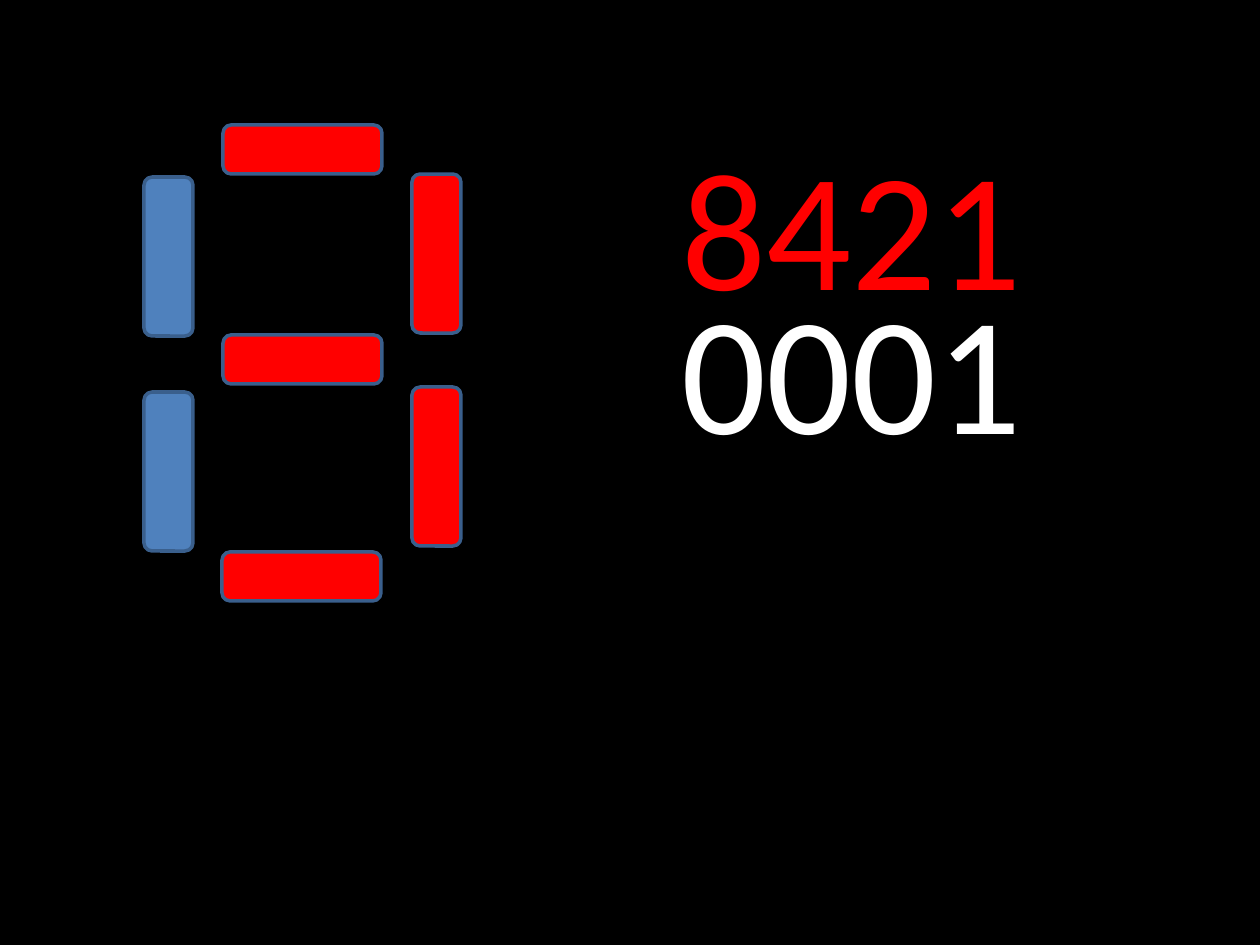
import pptx
import pptx.util
import pptx.dml.color
import pptx.enum.shapes

SCALE = 914400 // 126
LIT, UNLIT, OUTLINE = "FF0000", "4F81BD", "3A5F8C"
BAR_LENGTH, BAR_THICKNESS = 159, 49

SEGMENTS = [
    (223, 125, 0, LIT),
    (223, 335, 0, LIT),
    (222, 552, 0, LIT),
    (357, 442, 270, LIT),
    (89, 447, 270, UNLIT),
    (357, 229, 270, LIT),
    (89, 232, 270, UNLIT),
]
NUMBERS = [
    ("8421", 116, 420, "FF0000"),
    ("0001", 260, 217, "FFFFFF"),
]
NUMBER_LEFT, NUMBER_WIDTH = 669, 486


def px(*lengths):
    return [pptx.util.Emu(length * SCALE) for length in lengths]


def paint(fill, color):
    fill.solid()
    fill.fore_color.rgb = pptx.dml.color.RGBColor.from_string(color)


def add_segment(page, left, top, rotation, color):
    bar = page.shapes.add_shape(
        pptx.enum.shapes.MSO_SHAPE.ROUNDED_RECTANGLE,
        *px(left, top, BAR_LENGTH, BAR_THICKNESS))
    bar.rotation = rotation
    bar.shadow.inherit = False
    paint(bar.fill, color)
    paint(bar.line.fill, OUTLINE)
    bar.line.width = pptx.util.Pt(2)


def add_number(page, text, top, height, color):
    box = page.shapes.add_textbox(*px(NUMBER_LEFT, top, NUMBER_WIDTH, height))
    box.text_frame.word_wrap = True
    box.text_frame.text = text
    font = box.text_frame.paragraphs[0].runs[0].font
    font.name = "Calibri"
    font.size = pptx.util.Pt(96)
    paint(font.fill, color)


deck = pptx.Presentation()
deck.slide_width, deck.slide_height = px(1260, 945)
page = deck.slides.add_slide(deck.slide_layouts[6])
paint(page.background.fill, "000000")
for segment in SEGMENTS:
    add_segment(page, *segment)
for number in NUMBERS:
    add_number(page, *number)
deck.save("out.pptx")
